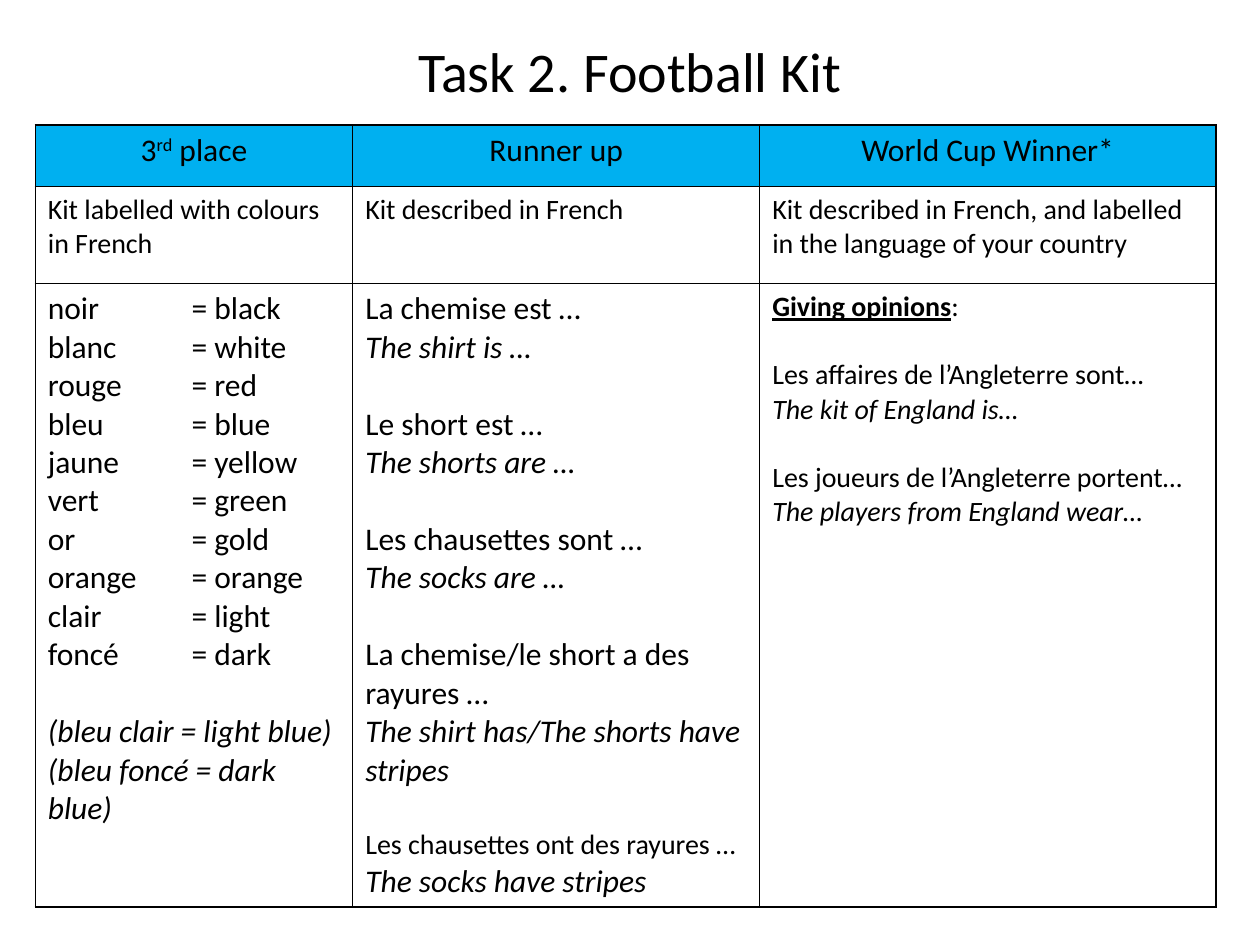
from lxml.etree import SubElement
from pptx import Presentation
from pptx.dml.color import RGBColor
from pptx.enum.text import MSO_ANCHOR, PP_ALIGN
from pptx.oxml.ns import qn
from pptx.util import Inches, Pt


def color(value):
    return RGBColor.from_string(value)


def add_run(paragraph, text, size, **formats):
    run = paragraph.add_run()
    run.text = text
    for name, value in {"name": "Calibri", "size": Pt(size), **formats}.items():
        setattr(run.font, name, value)
    run.font.color.rgb = color("000000")
    return run


prs = Presentation()
prs.slide_width, prs.slide_height = Inches(10), Inches(7.5)
slide = prs.slides.add_slide(prs.slide_layouts[5])

title = slide.shapes.title
title.left, title.top = Inches(0.5), Inches(0.29)
title.width, title.height = Inches(9), Inches(0.54)
title.text_frame.vertical_anchor = MSO_ANCHOR.MIDDLE
heading = title.text_frame.paragraphs[0]
heading.alignment = PP_ALIGN.CENTER
add_run(heading, "Task 2. Football Kit", 32)

col_widths = [2.52, 3.23, 3.62]
row_heights = [0.49, 0.77, 4.95]
kit = slide.shapes.add_table(
    3, 3, Inches(0.28), Inches(0.99), Inches(sum(col_widths)), Inches(sum(row_heights))
).table
kit.first_row = kit.horz_banding = False
for column, width in zip(kit.columns, col_widths):
    column.width = Inches(width)
for row, height in zip(kit.rows, row_heights):
    row.height = Inches(height)

for row_index, row in enumerate(kit.rows):
    for cell in row.cells:
        tc_pr = cell._tc.get_or_add_tcPr()
        for side in ("lnL", "lnR", "lnT", "lnB"):
            border = SubElement(tc_pr, qn(f"a:{side}"), w=str(Pt(1)))
            border_fill = SubElement(border, qn("a:solidFill"))
            SubElement(border_fill, qn("a:srgbClr"), val="000000")
        cell.fill.solid()
        cell.fill.fore_color.rgb = color("FFFFFF" if row_index else "00B0F0")

places = [["3", "rd", " place"], ["Runner up"], ["World Cup Winner*"]]
tasks = [
    "Kit labelled with colours in French",
    "Kit described in French",
    "Kit described in French, and labelled in the language of your country",
]
for col, (place, task) in enumerate(zip(places, tasks)):
    place_line = kit.cell(0, col).text_frame.paragraphs[0]
    place_line.alignment = PP_ALIGN.CENTER
    for part in place:
        run = add_run(place_line, part, 18)
        if part == "rd":
            run._r.get_or_add_rPr().set("baseline", "30000")
    add_run(kit.cell(1, col).text_frame.paragraphs[0], task, 16)

colours = {
    "noir": "black", "blanc": "white", "rouge": "red", "bleu": "blue",
    "jaune": "yellow", "vert": "green", "or": "gold", "orange": "orange",
    "clair": "light", "foncé": "dark",
}
colour_frame = kit.cell(2, 0).text_frame
for index, (french, english) in enumerate(colours.items()):
    line = colour_frame.add_paragraph() if index else colour_frame.paragraphs[0]
    tabs = SubElement(line._p.get_or_add_pPr(), qn("a:tabLst"))
    SubElement(tabs, qn("a:tab"), pos=str(Inches(1.14)), algn="l")
    add_run(line, f"{french}\t= {english}", 18)
for index, shade in enumerate(["(bleu clair = light blue)", "(bleu foncé = dark blue)"]):
    line = colour_frame.add_paragraph()
    line.space_before = Pt(0 if index else 22)
    add_run(line, shade, 18, italic=True)

descriptions = [
    ("La chemise est …", "The shirt is …", 18),
    ("Le short est …", "The shorts are …", 18),
    ("Les chausettes sont …", "The socks are …", 18),
    ("La chemise/le short a des rayures …", "The shirt has/The shorts have stripes", 18),
    ("Les chausettes ont des rayures …", "The socks have stripes", 16),
]
description_frame = kit.cell(2, 1).text_frame
for index, (french, english, french_size) in enumerate(descriptions):
    line = description_frame.add_paragraph() if index else description_frame.paragraphs[0]
    line.space_before = Pt(22 if index else 0)
    add_run(line, french, french_size)
    add_run(description_frame.add_paragraph(), english, 18, italic=True)

opinion_frame = kit.cell(2, 2).text_frame
opinion_heading = opinion_frame.paragraphs[0]
add_run(opinion_heading, "Giving opinions", 16, bold=True, underline=True)
add_run(opinion_heading, ":", 16)
opinions = [
    ("Les affaires de l’Angleterre sont", "The kit of England is…"),
    ("Les joueurs de l’Angleterre portent", "The players from England wear…"),
]
for french, english in opinions:
    line = opinion_frame.add_paragraph()
    line.space_before = Pt(19.5)
    add_run(line, french, 16)
    add_run(line, "…", 16, italic=True)
    add_run(opinion_frame.add_paragraph(), english, 16, italic=True)

prs.save("out.pptx")
